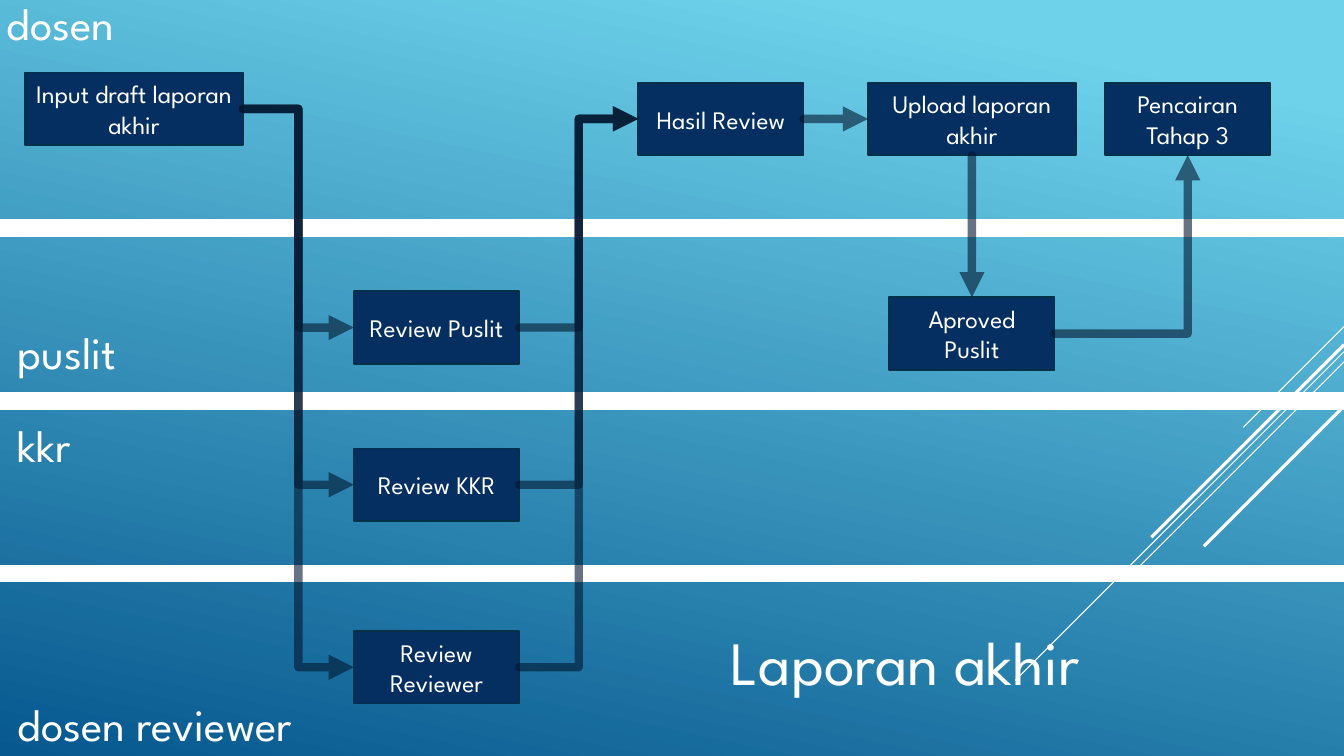
from lxml import etree
from pptx import Presentation
from pptx.dml.color import RGBColor
from pptx.enum.shapes import MSO_CONNECTOR, MSO_SHAPE
from pptx.enum.text import MSO_ANCHOR, MSO_AUTO_SIZE, PP_ALIGN
from pptx.oxml.ns import qn
from pptx.util import Inches, Pt

RECT = MSO_SHAPE.RECTANGLE
STRAIGHT, ELBOW = MSO_CONNECTOR.STRAIGHT, MSO_CONNECTOR.ELBOW
MIDDLE, CENTER = MSO_ANCHOR.MIDDLE, PP_ALIGN.CENTER
GROW = MSO_AUTO_SIZE.SHAPE_TO_FIT_TEXT
TOP, LEFT, BOTTOM, RIGHT = range(4)

WHITE = RGBColor(0xFF, 0xFF, 0xFF)
SKY = RGBColor(0x6E, 0xD2, 0xEB)
DEEP = RGBColor(0x06, 0x58, 0x8E)
NAVY = RGBColor(0x05, 0x2F, 0x61)
BOX_EDGE = RGBColor(0x04, 0x31, 0x48)
ARROW = RGBColor(0x03, 0x17, 0x30)
FONT = "League Spartan"

# Content
SLIDE_W, SLIDE_H = 13.33, 7.5
STEP_W, STEP_H = 1.64, 0.72
COLUMNS = {"draft": 1.33, "review": 4.33, "result": 7.15, "upload": 9.64, "payout": 11.78}
ROWS = {"draft": 1.08, "dosen": 1.18, "puslit": 3.25, "approval": 3.31, "kkr": 4.81, "reviewer": 6.62}
STEPS = [  # text, column centre, row centre, width
    ("Input draft laporan akhir", "draft", "draft", 2.16),
    ("Review Puslit", "review", "puslit", STEP_W),
    ("Review KKR", "review", "kkr", STEP_W),
    ("Review Reviewer", "review", "reviewer", STEP_W),
    ("Hasil Review", "result", "dosen", STEP_W),
    ("Upload laporan akhir", "upload", "dosen", 2.06),
    ("Aproved Puslit", "upload", "approval", STEP_W),
    ("Pencairan Tahap 3", "payout", "dosen", STEP_W),
]
REVIEWS = [text for text, column, _, _ in STEPS if column == "review"]
FLOWS = [("Input draft laporan akhir", RIGHT, review, LEFT, ELBOW) for review in REVIEWS]
FLOWS += [(review, RIGHT, "Hasil Review", LEFT, ELBOW) for review in REVIEWS]
FLOWS += [
    ("Hasil Review", RIGHT, "Upload laporan akhir", LEFT, STRAIGHT),
    ("Upload laporan akhir", BOTTOM, "Aproved Puslit", TOP, STRAIGHT),
    ("Aproved Puslit", RIGHT, "Pencairan Tahap 3", BOTTOM, ELBOW),
]
LANE_DIVIDERS = [2.18, 3.9, 5.61]
DIVIDER_H = 0.16
LABELS = [  # text, left, top, width, height, size
    ("Laporan akhir", 7.15, 6.14, 5.77, 0.84, 44),
    ("puslit", 0.08, 3.17, 2.33, 0.64, 32),
    ("dosen", -0.03, -0.09, 5.77, 0.64, 32),
    ("kkr", 0.08, 4.09, 2.26, 0.64, 32),
    ("dosen reviewer", 0.08, 6.86, 5.77, 0.64, 32),
]
# Diagonals at 45 degrees from the right edge: start height, run, line width
DIAGONALS = [(3.24, 1, 0.75), (3.49, 3.26, 0.75), (3.59, 2.07, 0.75),
             (3.42, 1.91, 2.25), (4.03, 1.39, 2.25)]

prs = Presentation()
prs.slide_width, prs.slide_height = Inches(SLIDE_W), Inches(SLIDE_H)
slide = prs.slides.add_slide(prs.slide_layouts[6])
shapes = slide.shapes


def add_bar(left, top, width, height, fill, edge):
    bar = shapes.add_shape(RECT, *map(Inches, (left, top, width, height)))
    bar.shadow.inherit = False
    bar.fill.solid()
    bar.fill.fore_color.rgb = fill
    bar.line.color.rgb = edge
    bar.line.width = Pt(1.25)
    return bar


def write(frame, text, size, **frame_format):
    for name, value in {"word_wrap": True, **frame_format}.items():
        setattr(frame, name, value)
    paragraph = frame.paragraphs[0]
    run = paragraph.add_run()
    run.text = text
    for name, value in {"name": FONT, "size": Pt(size)}.items():
        setattr(run.font, name, value)
    run.font.color.rgb = WHITE
    return paragraph


def add_line(kind, start, end, color, width):
    line = shapes.add_connector(kind, *map(Inches, start + end))
    line.line.color.rgb = color
    line.line.width = Pt(width)
    etree.SubElement(line.element.spPr, qn("a:effectLst"))
    return line


# Background gradient
background = slide.background.fill
background.gradient()
background.gradient_angle = 360 - 102
for stop, (position, color) in zip(background.gradient_stops, [(0.1, SKY), (1, DEEP)]):
    stop.position = position
    stop.color.rgb = color

# Diagonal decoration
for height, run_length, weight in DIAGONALS:
    add_line(STRAIGHT, (SLIDE_W, height), (SLIDE_W - run_length, height + run_length), WHITE, weight)

# Lane dividers
for divider_top in LANE_DIVIDERS:
    add_bar(0, divider_top, SLIDE_W, DIVIDER_H, WHITE, WHITE)

# Process steps
step_boxes = {}
for text, column, row, width in STEPS:
    box = add_bar(COLUMNS[column] - width / 2, ROWS[row] - STEP_H / 2, width, STEP_H, NAVY, BOX_EDGE)
    write(box.text_frame, text, 18, vertical_anchor=MIDDLE).alignment = CENTER
    step_boxes[text] = box

# Flow arrows
for source, source_side, target, target_side, kind in FLOWS:
    flow = add_line(kind, (0, 0), (0, 0), ARROW, 6)
    flow.begin_connect(step_boxes[source], source_side)
    flow.end_connect(step_boxes[target], target_side)
    if kind == ELBOW and target_side == BOTTOM:  # a single bend
        flow.element.spPr.find(qn("a:prstGeom")).set("prst", "bentConnector2")
    stroke = flow.line._get_or_add_ln()
    stroke.set("cap", "rnd")
    etree.SubElement(stroke.find(".//" + qn("a:srgbClr")), qn("a:alpha"), val="60000")
    etree.SubElement(stroke, qn("a:round"))
    etree.SubElement(stroke, qn("a:tailEnd"), type="triangle")

# Lane names and title
for text, left, top, width, height, size in LABELS:
    label = shapes.add_textbox(*map(Inches, (left, top, width, height)))
    write(label.text_frame, text, size, auto_size=GROW)

prs.save("out.pptx")
